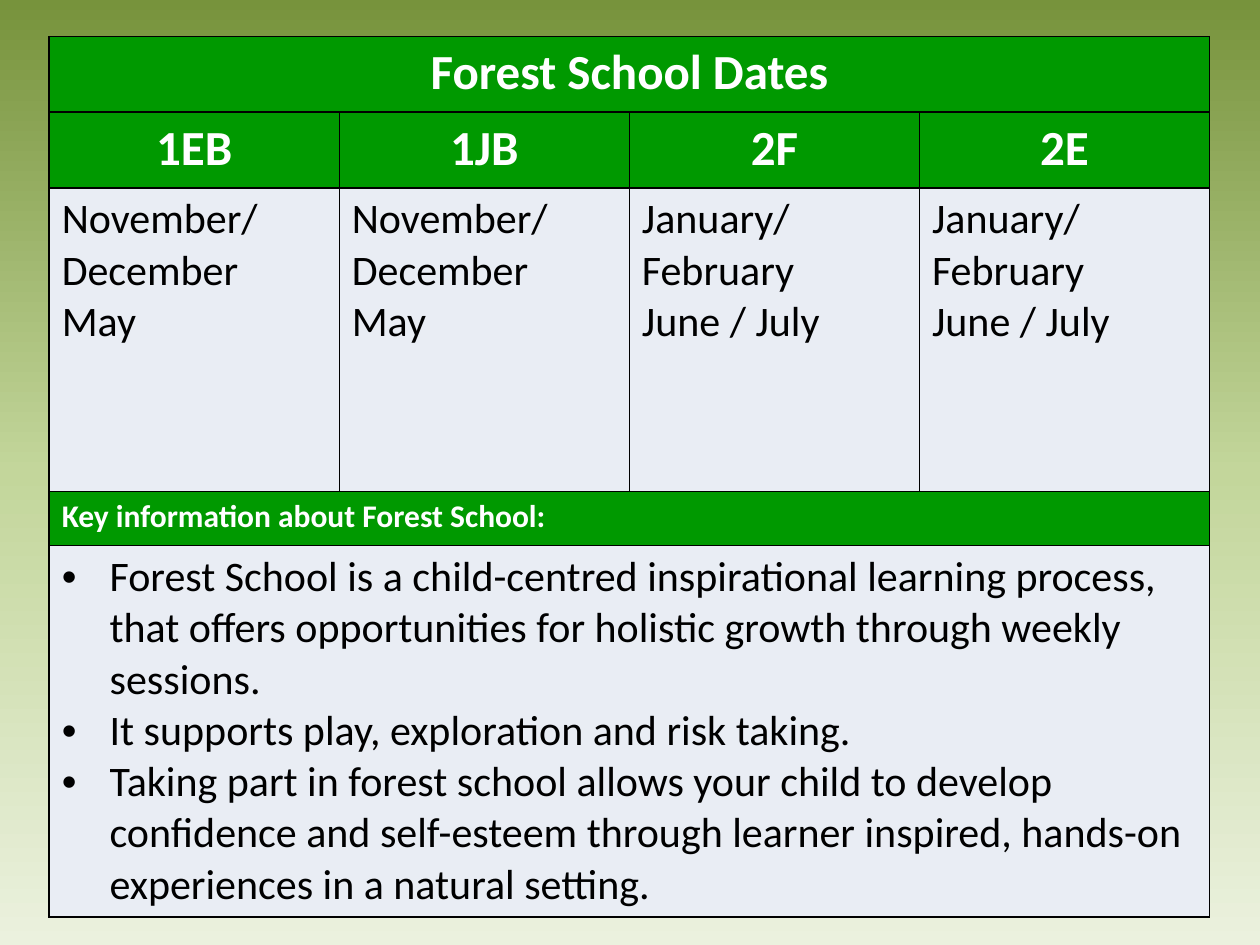
from copy import deepcopy

from lxml.etree import SubElement
from pptx import Presentation
from pptx.dml.color import RGBColor
from pptx.enum.text import PP_ALIGN
from pptx.oxml import parse_xml
from pptx.oxml.ns import nsdecls, qn
from pptx.util import Inches, Pt

GREEN = RGBColor(0x00, 0x99, 0x00)
PALE = RGBColor(0xE9, 0xED, 0xF4)
WHITE = RGBColor(0xFF, 0xFF, 0xFF)
BLACK = RGBColor(0x00, 0x00, 0x00)
SKY_STOPS = [
    (0, RGBColor(0x77, 0x93, 0x3C)),
    (0.5, RGBColor(0xC3, 0xD6, 0x9B)),
    (1, RGBColor(0xEB, 0xF1, 0xDE)),
]

ROW_HEIGHTS = [0.6, 0.6, 2.41, 0.43, 2.94]
WINTER = ["November/", "December", "May"]
SUMMER = ["January/", "February", "June / July"]
CLASS_DATES = [("1EB", WINTER), ("1JB", WINTER), ("2F", SUMMER), ("2E", SUMMER)]
KEY_POINTS = [
    "Forest School is a child-centred inspirational learning process, that offers "
    "opportunities for holistic growth through weekly sessions.",
    "It supports play, exploration and risk taking.",
    "Taking part in forest school allows your child to develop confidence and "
    "self-esteem through learner inspired, hands-on experiences in a natural setting.",
]


def paint_background(slide):
    fill = slide.background.fill
    fill.gradient()
    fill.gradient_angle = 270
    stop_list = slide.element.find(".//" + qn("a:gsLst"))
    stop_list.append(deepcopy(stop_list[-1]))
    for stop, (position, color) in zip(fill.gradient_stops, SKY_STOPS):
        stop.position = position
        stop.color.rgb = color


def add_borders(cell):
    properties = cell._tc.get_or_add_tcPr()
    for index, side in enumerate("LRTB"):
        properties.insert(index, parse_xml(
            f'<a:ln{side} {nsdecls("a")} w="12700"><a:solidFill>'
            f'<a:srgbClr val="{BLACK}"/></a:solidFill></a:ln{side}>'))


def add_bullet(paragraph):
    properties = paragraph._p.get_or_add_pPr()
    properties.set("marL", str(Inches(0.38)))
    properties.set("indent", str(Inches(-0.38)))
    SubElement(properties, qn("a:buFont"), typeface="Arial")
    SubElement(properties, qn("a:buChar"), char="•")


def write_cell(cell, lines, size, heading=False, align=PP_ALIGN.LEFT, bulleted=False):
    frame = cell.text_frame
    for index, line in enumerate(lines):
        paragraph = frame.add_paragraph() if index else frame.paragraphs[0]
        paragraph.alignment = align
        if bulleted:
            add_bullet(paragraph)
        run = paragraph.add_run()
        run.text = line
        run.font.name = "Calibri"
        run.font.size = Pt(size)
        run.font.bold = heading
        run.font.color.rgb = WHITE if heading else BLACK


def add_dates_table(slide, left, top, width, height):
    table = slide.shapes.add_table(
        len(ROW_HEIGHTS), len(CLASS_DATES), left, top, width, height).table
    table.first_row = table.horz_banding = False
    for row, row_height in zip(table.rows, ROW_HEIGHTS):
        row.height = Inches(row_height)
    for row_index, row in enumerate(table.rows):
        for cell in row.cells:
            cell.fill.solid()
            cell.fill.fore_color.rgb = PALE if row_index in (2, 4) else GREEN
            add_borders(cell)
    for row_index in (0, 3, 4):
        table.cell(row_index, 0).merge(table.cell(row_index, len(CLASS_DATES) - 1))

    write_cell(table.cell(0, 0), ["Forest School Dates"], 28, True, PP_ALIGN.CENTER)
    for column, (class_name, dates) in enumerate(CLASS_DATES):
        write_cell(table.cell(1, column), [class_name], 28, True, PP_ALIGN.CENTER)
        write_cell(table.cell(2, column), dates, 24)
    write_cell(table.cell(3, 0), ["Key information about Forest School:"], 18, True)
    write_cell(table.cell(4, 0), KEY_POINTS, 24, bulleted=True)


def main():
    presentation = Presentation()
    presentation.slide_width = Inches(10)
    presentation.slide_height = Inches(7.5)
    slide = presentation.slides.add_slide(presentation.slide_layouts[6])
    paint_background(slide)
    add_dates_table(slide, Inches(0.39), Inches(0.29), Inches(9.21),
                    Inches(sum(ROW_HEIGHTS)))
    presentation.save("out.pptx")


if __name__ == "__main__":
    main()
